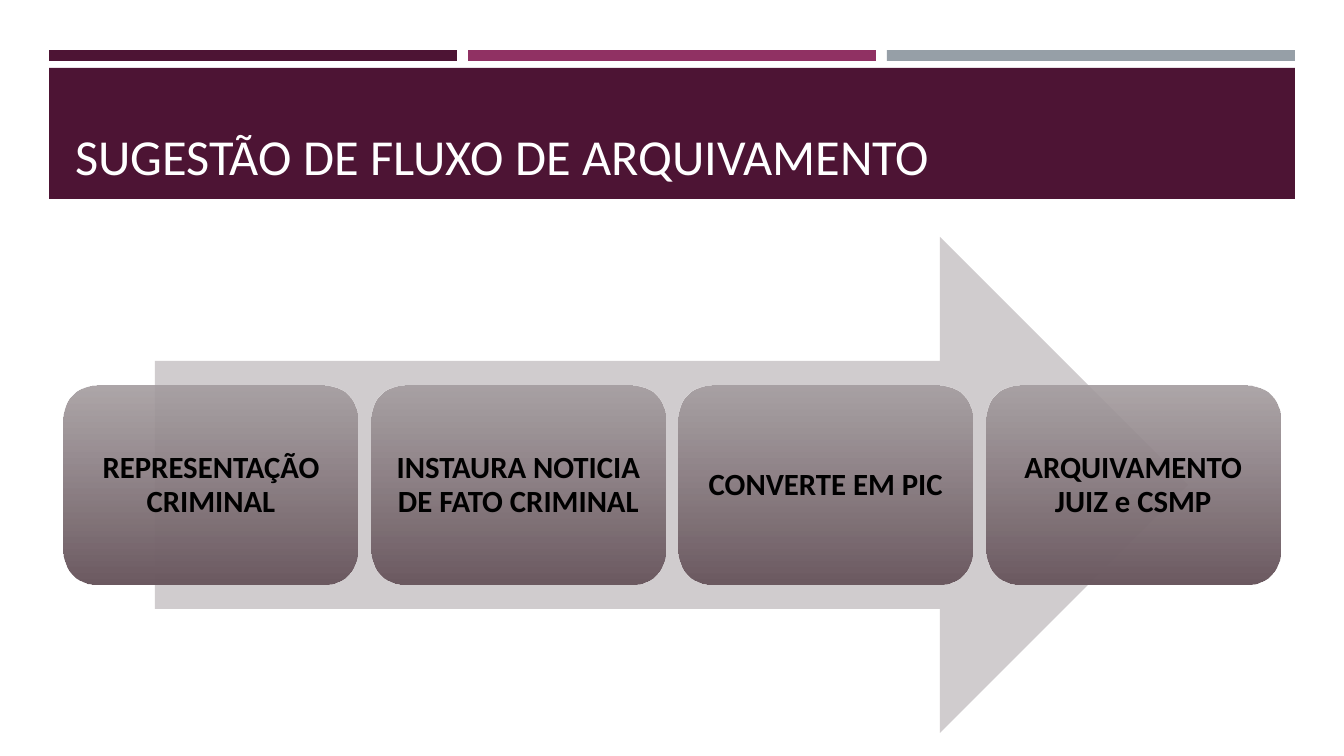
from lxml.etree import SubElement
from pptx import Presentation
from pptx.dml.color import RGBColor
from pptx.enum.shapes import MSO_SHAPE as SHAPE
from pptx.enum.text import MSO_ANCHOR as ANCHOR, PP_ALIGN as ALIGN
from pptx.oxml.ns import qn
from pptx.util import Emu, Pt

PLUM = RGBColor(0x4D, 0x14, 0x34)
MAGENTA = RGBColor(0x90, 0x31, 0x63)
STEEL = RGBColor(0x96, 0x9F, 0xA7)
ARROW_GREY = RGBColor(0xD0, 0xCC, 0xCE)
STEP_TOP = RGBColor(0xA4, 0x9C, 0x9F)
STEP_BOTTOM = RGBColor(0x6C, 0x5A, 0x61)
WHITE = RGBColor(0xFF, 0xFF, 0xFF)
BLACK = RGBColor(0, 0, 0)
FONT = "Calibri"


def px(n):
    return Emu(round(n * 914400 / 100.8))


def add_box(kind, x, y, w, h, color=None):
    sp = s.shapes.add_shape(kind, px(x), px(y), px(w), px(h))
    sp.shadow.inherit = False
    sp.line.fill.background()
    if color is not None:
        sp.fill.solid()
        sp.fill.fore_color.rgb = color
    return sp


prs = Presentation()
prs.slide_width, prs.slide_height = px(1344), px(756)
s = prs.slides.add_slide(prs.slide_layouts[5])

# Top stripes and title band
for i, color in enumerate((PLUM, MAGENTA, STEEL)):
    add_box(SHAPE.RECTANGLE, 49 + 419 * i, 50, 408, 11, color)
add_box(SHAPE.RECTANGLE, 49, 68, 1246, 131, PLUM)

# Title, brought in front of its band
title = s.shapes.title
s.shapes._spTree.append(title._element)
title.left, title.top, title.width, title.height = px(65), px(79), px(1216), px(112)
tf = title.text_frame
tf.word_wrap = True
tf.vertical_anchor = ANCHOR.BOTTOM
p = tf.paragraphs[0]
p.alignment = ALIGN.LEFT
p.line_spacing = 0.9
r = p.add_run()
r.text = "SUGESTÃO DE FLUXO DE ARQUIVAMENTO"
r.font.name, r.font.size, r.font.color.rgb = FONT, Pt(36), WHITE

# Background arrow
add_box(SHAPE.RIGHT_ARROW, 155, 237, 1033, 496, ARROW_GREY)

# Process steps
steps = (
    "REPRESENTAÇÃO CRIMINAL",
    "INSTAURA NOTICIA DE FATO CRIMINAL",
    "CONVERTE EM PIC",
    "ARQUIVAMENTO JUIZ e CSMP",
)
for i, step in enumerate(steps):
    sp = add_box(SHAPE.ROUNDED_RECTANGLE, 64 + 307.4 * i, 386, 294, 199)
    sp.fill.gradient()
    sp.fill.gradient_angle = 270
    for stop, pos, color in zip(sp.fill.gradient_stops, (0, 1), (STEP_TOP, STEP_BOTTOM)):
        stop.position = pos
        stop.color.rgb = color
    top_color = sp._element.spPr.find(".//" + qn("a:srgbClr"))
    SubElement(top_color, qn("a:alpha"), val="90000")

    tf = sp.text_frame
    tf.word_wrap = True
    tf.vertical_anchor = ANCHOR.MIDDLE
    tf.margin_left = tf.margin_right = tf.margin_top = tf.margin_bottom = px(9)
    p = tf.paragraphs[0]
    p.alignment = ALIGN.CENTER
    p.line_spacing = 0.9
    r = p.add_run()
    r.text = step
    r.font.name, r.font.size, r.font.color.rgb = FONT, Pt(22), BLACK
    r.font.bold = True

prs.save("out.pptx")
